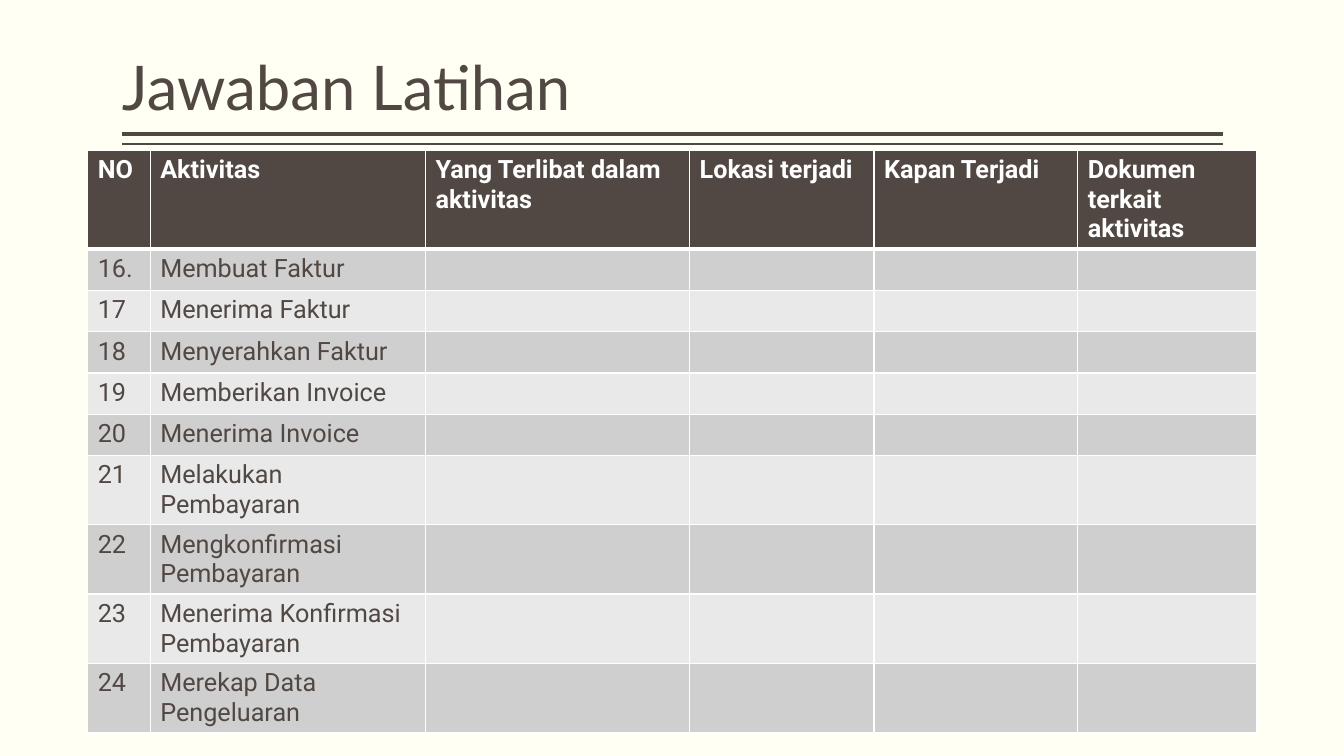
from lxml.etree import SubElement
from pptx import Presentation
from pptx.dml.color import RGBColor
from pptx.enum.shapes import MSO_CONNECTOR
from pptx.enum.text import MSO_ANCHOR, MSO_AUTO_SIZE, PP_ALIGN
from pptx.oxml import parse_xml
from pptx.oxml.ns import nsdecls, qn
from pptx.util import Inches, Pt

BROWN = RGBColor(0x51, 0x48, 0x43)
WHITE = RGBColor(0xFF, 0xFF, 0xFF)
CREAM = RGBColor(0xFF, 0xFF, 0xF3)
BANDS = RGBColor(0xE9, 0xE9, 0xE9), RGBColor(0xD0, 0xCF, 0xCF)

COLUMNS = [0.62, 2.73, 2.62, 1.83, 2.02, 1.77]
ROW_HEIGHT = 0.41
HEADERS = ["NO", "Aktivitas", "Yang Terlibat dalam aktivitas", "Lokasi terjadi",
           "Kapan Terjadi", "Dokumen terkait aktivitas"]
ACTIVITIES = [
    ("16.", "Membuat Faktur"),
    ("17", "Menerima Faktur"),
    ("18", "Menyerahkan Faktur"),
    ("19", "Memberikan Invoice"),
    ("20", "Menerima Invoice"),
    ("21", "Melakukan Pembayaran"),
    ("22", "Mengkonfirmasi Pembayaran"),
    ("23", "Menerima Konfirmasi Pembayaran"),
    ("24", "Merekap Data Pengeluaran"),
]
FIRST_MIDDLE_ROW = 6


def write(tf, text, font="Roboto", size=18, color=BROWN, bold=False, spacing=None):
    p = tf.paragraphs[0]
    p.alignment = PP_ALIGN.LEFT
    p.line_spacing = spacing
    r = p.add_run()
    r.text = text
    r.font.name = font
    r.font.size = Pt(size)
    r.font.color.rgb = color
    r.font.bold = bold


def add_title(s, text, left, top, width, height):
    sp = s.shapes.title
    sp.left, sp.top, sp.width, sp.height = map(Inches, (left, top, width, height))
    tf = sp.text_frame
    tf.margin_left = tf.margin_right = 0
    tf.margin_top = tf.margin_bottom = Inches(0.05)
    tf.vertical_anchor = MSO_ANCHOR.BOTTOM
    tf.auto_size = MSO_AUTO_SIZE.NONE
    tf.word_wrap = True
    write(tf, text, font="Lato", size=44, spacing=0.9)


def add_rules(s, left, top, width, gap):
    for i, weight in enumerate((3, 1)):
        y = Inches(top + i * gap)
        line = s.shapes.add_connector(MSO_CONNECTOR.STRAIGHT, Inches(left + width), y,
                                      Inches(left), y)
        line.line.color.rgb = BROWN
        line.line.width = Pt(weight)
        SubElement(line._element.spPr, qn("a:effectLst"))


def set_borders(cell, top=1, bottom=1):
    sides = {"lnL": 1, "lnR": 1, "lnT": top, "lnB": bottom}
    for i, (side, weight) in enumerate(sides.items()):
        cell._tc.get_or_add_tcPr().insert(i, parse_xml(
            f'<a:{side} {nsdecls("a")} w="{Pt(weight)}"><a:solidFill>'
            f'<a:srgbClr val="{WHITE}"/></a:solidFill></a:{side}>'))


def add_activity_table(s, left, top):
    rows = [HEADERS] + ACTIVITIES
    table = s.shapes.add_table(len(rows), len(COLUMNS), Inches(left), Inches(top),
                               Inches(sum(COLUMNS)), Inches(ROW_HEIGHT * len(rows))).table
    for column, width in zip(table.columns, COLUMNS):
        column.width = Inches(width)
    for i, texts in enumerate(rows):
        table.rows[i].height = Inches(ROW_HEIGHT)
        header = i == 0
        for j, cell in enumerate(table.rows[i].cells):
            cell.fill.solid()
            cell.fill.fore_color.rgb = BROWN if header else BANDS[i % 2]
            set_borders(cell, top=3 if i == 1 else 1, bottom=3 if header else 1)
            if j < len(texts):
                write(cell.text_frame, texts[j], color=WHITE if header else BROWN,
                      bold=header)
            if j == 1 and i >= FIRST_MIDDLE_ROW:
                cell.vertical_anchor = MSO_ANCHOR.MIDDLE


def main():
    prs = Presentation()
    prs.slide_width, prs.slide_height = Inches(13.33), Inches(7.5)
    s = prs.slides.add_slide(prs.slide_layouts[5])
    s.background.fill.solid()
    s.background.fill.fore_color.rgb = CREAM
    add_rules(s, 1.21, 1.33, 10.92, 0.1)
    add_title(s, "Jawaban Latihan", 1.21, 0.08, 10.92, 1.2)
    add_activity_table(s, 0.87, 1.49)
    prs.save("out.pptx")


if __name__ == "__main__":
    main()
